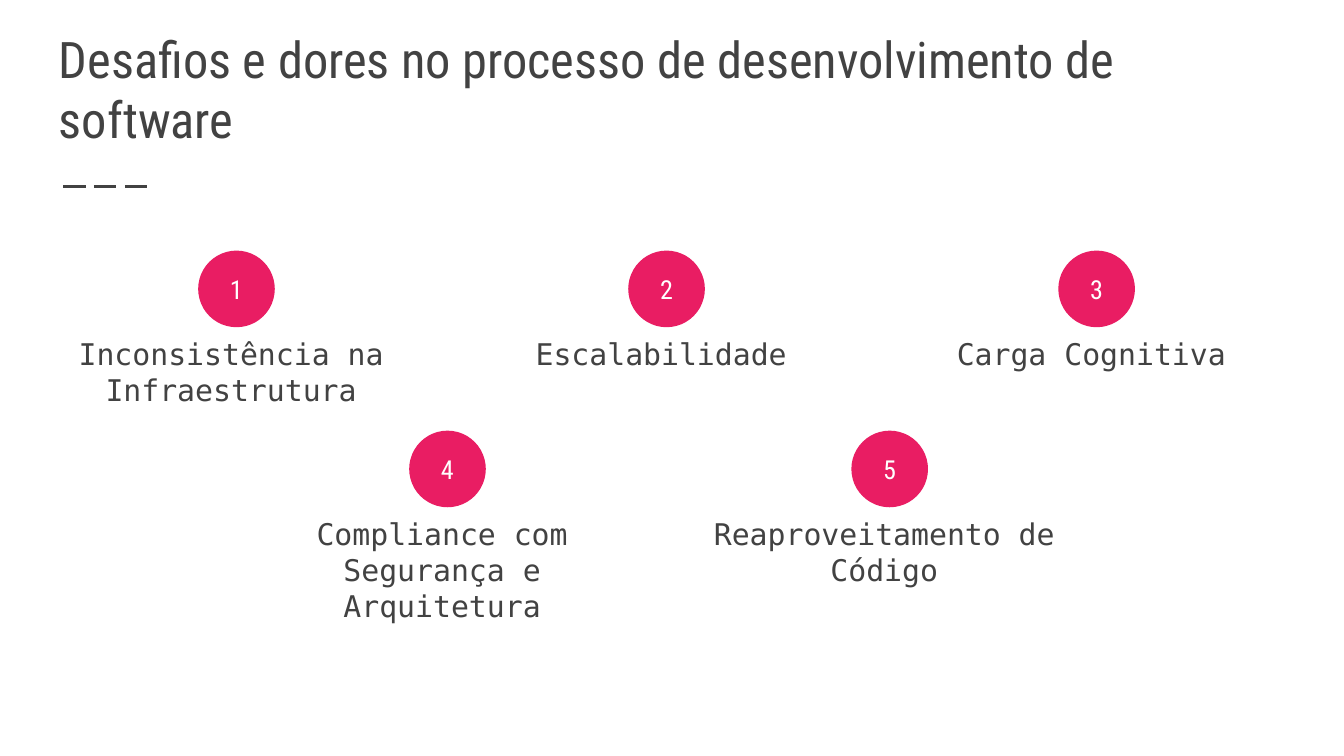
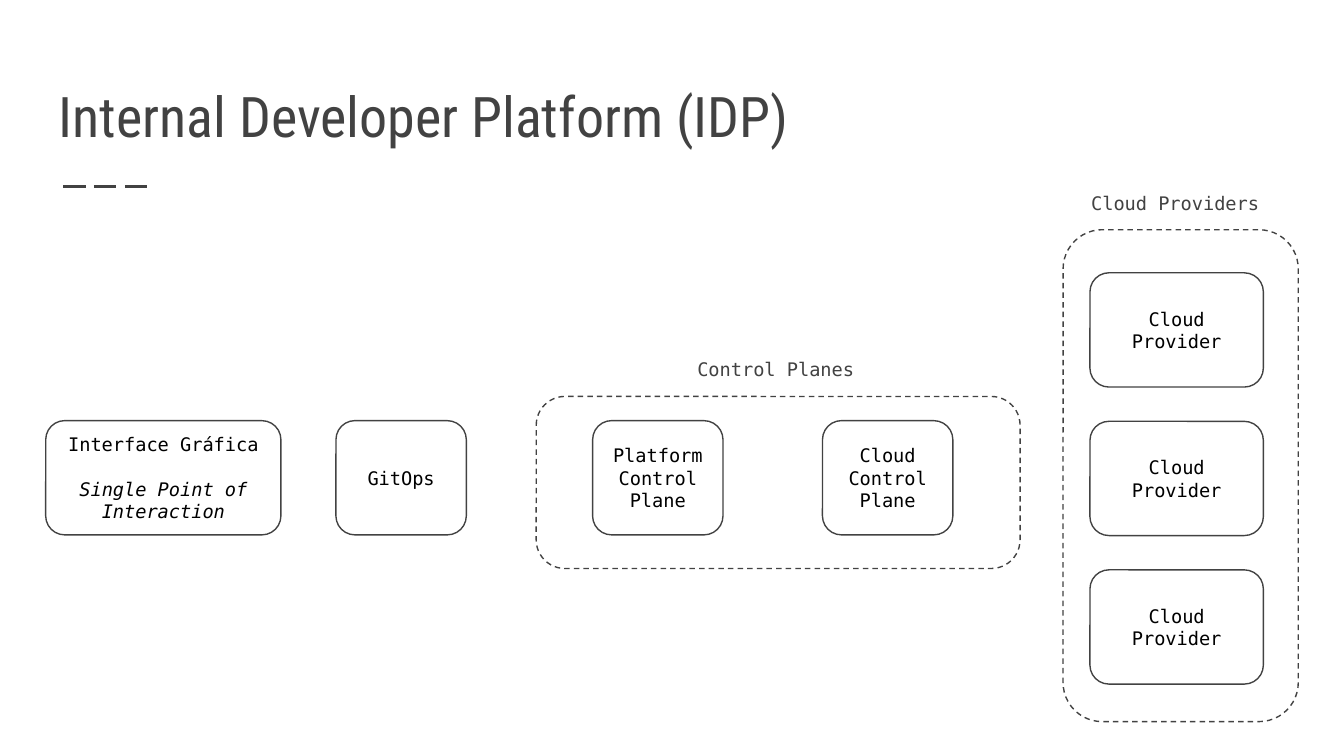
import dataclasses
import typing

import lxml.etree
import pptx
import pptx.dml.color
import pptx.enum.dml
import pptx.enum.shapes
import pptx.enum.text
import pptx.oxml.ns
import pptx.util

Inches = pptx.util.Inches
Pt = pptx.util.Pt
Shape = pptx.enum.shapes.MSO_SHAPE
Dash = pptx.enum.dml.MSO_LINE
Align = pptx.enum.text.PP_ALIGN
Anchor = pptx.enum.text.MSO_ANCHOR
Fit = pptx.enum.text.MSO_AUTO_SIZE
WIDTH = 10
HEIGHT = WIDTH * 9 / 16


@dataclasses.dataclass(frozen=True)
class Theme:
    ink: str = "424242"
    pink: str = "E91D63"
    white: str = "FFFFFF"
    black: str = "000000"
    head: str = "Roboto Condensed"
    mono: str = "DejaVu Sans Mono"
    title: int = 30
    long: int = 27
    note: int = 16
    badge: int = 14
    small: int = 10
    thin: float = 0.75
    rule: float = 1.5


THEME = Theme()


@dataclasses.dataclass(frozen=True)
class Style:
    font: str
    size: int
    color: str
    align: Align = Align.CENTER
    anchor: Anchor = Anchor.MIDDLE
    fit: Fit = Fit.NONE


TITLE = Style(THEME.head, THEME.title, THEME.ink, Align.LEFT, Anchor.BOTTOM)
LONG = dataclasses.replace(TITLE, size=THEME.long)
BADGE = Style(THEME.head, THEME.badge, THEME.white)
NOTE = Style(THEME.mono, THEME.note, THEME.ink, Align.CENTER, Anchor.TOP, Fit.SHAPE_TO_FIT_TEXT)
LABEL = dataclasses.replace(NOTE, size=THEME.small, align=Align.LEFT)
NODE = Style(THEME.mono, THEME.small, THEME.black)


@dataclasses.dataclass(frozen=True)
class Box:
    left: float
    top: float
    width: float
    height: float

    def emu(self) -> list[int]:
        return [Inches(v) for v in dataclasses.astuple(self)]


@dataclasses.dataclass(frozen=True)
class Step:
    mark: str
    text: str
    left: float
    top: float
    lines: int


@dataclasses.dataclass(frozen=True)
class Node:
    box: Box
    text: str
    hint: str = ""
    fill: str | None = None


@dataclasses.dataclass(frozen=True)
class Frame:
    box: Box
    text: str
    label: Box


def shade(code: str) -> pptx.dml.color.RGBColor:
    return pptx.dml.color.RGBColor.from_string(code)


def apply(target: typing.Any, values: dict[str, typing.Any]) -> None:
    for name, value in values.items():
        setattr(target, name, value)


def write(shape: typing.Any, style: Style, text: str, hint: str = "") -> None:
    frame = shape.text_frame
    inset = Inches(0.1)
    apply(frame, {
        "word_wrap": True, "auto_size": style.fit, "vertical_anchor": style.anchor,
        "margin_left": inset, "margin_right": inset,
        "margin_top": inset, "margin_bottom": inset,
    })
    parts = [text, hint] if hint else [text]
    for i, part in enumerate(parts):
        para = frame.add_paragraph() if i else frame.paragraphs[0]
        apply(para, {"alignment": style.align, "space_before": Pt(11.6 * i)})
        run = para.add_run()
        run.text = part
        apply(run.font, {"name": style.font, "size": Pt(style.size), "italic": bool(i)})
        run.font.color.rgb = shade(style.color)


def add_text(shapes: typing.Any, box: Box, style: Style, text: str) -> None:
    write(shapes.add_textbox(*box.emu()), style, text)


def add_form(shapes: typing.Any, kind: Shape, box: Box, fill: str | None,
             line: str, dash: Dash = Dash.SOLID) -> typing.Any:
    shape = shapes.add_shape(kind, *box.emu())
    shape.shadow.inherit = False
    if fill:
        shape.fill.solid()
        shape.fill.fore_color.rgb = shade(fill)
    else:
        shape.fill.background()
    shape.line.color.rgb = shade(line)
    apply(shape.line, {"width": Pt(THEME.thin), "dash_style": dash})
    return shape


def add_page(deck: typing.Any, title: str, style: Style) -> typing.Any:
    shapes = deck.slides.add_slide(deck.slide_layouts[6]).shapes
    rule = shapes.add_connector(
        pptx.enum.shapes.MSO_CONNECTOR.STRAIGHT,
        Inches(0.47), Inches(1.39), Inches(1.14), Inches(1.39))
    rule.line.color.rgb = shade(THEME.ink)
    apply(rule.line, {"width": Pt(THEME.rule), "dash_style": Dash.LONG_DASH})
    lxml.etree.SubElement(rule._element.spPr, pptx.oxml.ns.qn("a:effectLst"))
    add_text(shapes, Box(0.34, 0.41, 9.32, 0.8), style, title)
    return shapes


def add_step(shapes: typing.Any, step: Step) -> None:
    group = shapes.add_group_shape().shapes
    disc = Box(step.left + 1.14, step.top, 0.56, 0.56)
    write(add_form(group, Shape.OVAL, disc, THEME.pink, THEME.pink), BADGE, step.mark)
    note = Box(step.left, step.top + 0.53, 2.76, 0.2 + 0.27 * step.lines)
    add_text(group, note, NOTE, step.text)


def add_node(shapes: typing.Any, node: Node) -> None:
    shape = add_form(shapes, Shape.ROUNDED_RECTANGLE, node.box, node.fill, THEME.ink)
    write(shape, NODE, node.text, node.hint)


def add_frame(shapes: typing.Any, frame: Frame) -> None:
    add_form(shapes, Shape.ROUNDED_RECTANGLE, frame.box, None, THEME.ink, Dash.DASH)
    add_text(shapes, frame.label, LABEL, frame.text)


def draw_pains(deck: typing.Any) -> None:
    shapes = add_page(deck, "Desafios e dores no processo de desenvolvimento de software", LONG)
    rows = [
        (0.34, 3.2, 1.87, [("Inconsistência na Infraestrutura", 2),
                           ("Escalabilidade", 1), ("Carga Cognitiva", 1)]),
        (1.91, 3.29, 3.21, [("Compliance com Segurança e Arquitetura", 3),
                            ("Reaproveitamento de Código", 2)]),
    ]
    count = 0
    for left, pitch, top, notes in rows:
        for i, (text, lines) in enumerate(notes):
            count += 1
            add_step(shapes, Step(str(count), text, left + i * pitch, top, lines))


def draw_flow(deck: typing.Any) -> None:
    shapes = add_page(deck, "Internal Developer Platform (IDP)", TITLE)
    top, tall, slim = 3.13, 0.85, 0.97
    first, last = 2.03, 4.24
    nodes = [
        Node(Box(0.34, top, 1.75, tall), "Interface Gráfica", "Single Point of Interaction"),
        Node(Box(2.5, top, slim, tall), "GitOps"),
    ]
    nodes += [
        Node(Box(8.11, first + i * (last - first) / 2, 1.29, tall),
             "Cloud Provider", fill=THEME.white)
        for i in range(3)
    ]
    for node in nodes:
        add_node(shapes, node)
    group = shapes.add_group_shape().shapes
    for left, text in [(4.41, "Platform Control Plane"), (6.12, "Cloud Control Plane")]:
        add_node(group, Node(Box(left, top, slim, tall), text))
    add_frame(group, Frame(Box(3.99, 2.95, 3.6, 1.28), "Control Planes",
                           Box(5.09, 2.58, 1.4, 0.37)))
    add_frame(shapes, Frame(Box(7.91, 1.71, 1.75, 3.66), "Cloud Providers",
                            Box(8.02, 1.34, 1.48, 0.37)))


def main() -> None:
    deck = pptx.Presentation()
    apply(deck, {"slide_width": Inches(WIDTH), "slide_height": Inches(HEIGHT)})
    draw_pains(deck)
    draw_flow(deck)
    deck.save("out.pptx")


if __name__ == "__main__":
    main()
